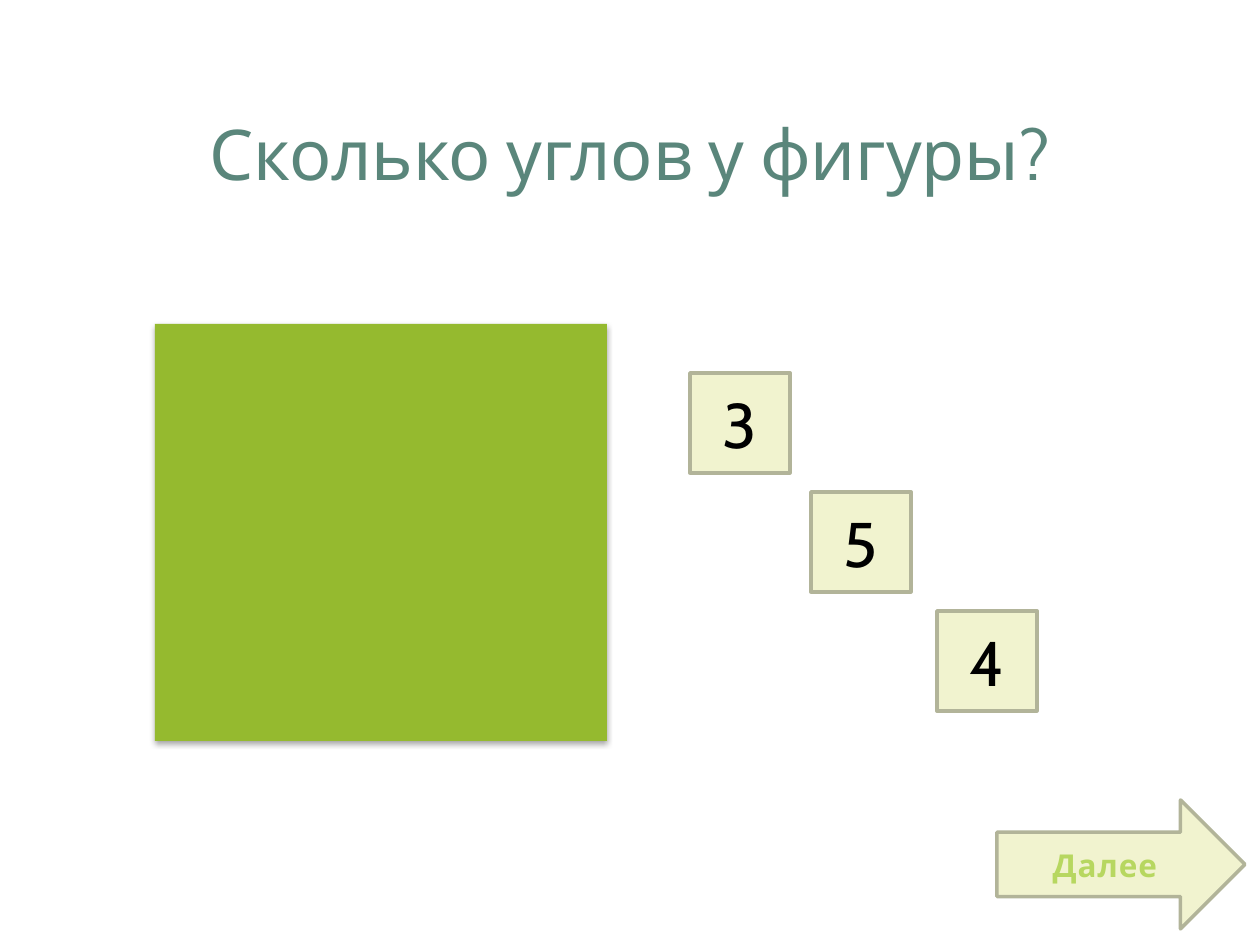
"""Build a quiz slide that asks how many corners a figure has."""
from lxml.etree import SubElement
from pptx import Presentation
from pptx.dml.color import RGBColor
from pptx.enum.shapes import MSO_SHAPE
from pptx.enum.text import MSO_ANCHOR, PP_ALIGN
from pptx.oxml.ns import qn
from pptx.util import Emu, Pt

EMU_PER_PX = 914400 / 126
FONT = "Cabin"
COLORS = {
    "title": "5A867B",
    "figure": "95BA2F",
    "button": "F1F3CF",
    "border": "B2B499",
    "answer": "000000",
    "next": "B7D760",
    "shadow": "000000",
}
ANSWER_SIZE = 100
ANSWERS = [("3", 690, 373), ("5", 811, 492), ("4", 937, 611)]


def px(*lengths):
    return [Emu(round(length * EMU_PER_PX)) for length in lengths]


def color(name):
    return RGBColor.from_string(COLORS[name])


def write_text(shape, text, size, color_name, bold=False):
    frame = shape.text_frame
    frame.word_wrap = True
    frame.vertical_anchor = MSO_ANCHOR.MIDDLE
    paragraph = frame.paragraphs[0]
    paragraph.text = text
    paragraph.alignment = PP_ALIGN.CENTER
    font = paragraph.font
    font.name = FONT
    font.size = Pt(size)
    font.bold = bold
    font.color.rgb = color(color_name)
    return paragraph


def add_title(slide, text, box):
    write_text(slide.shapes.add_textbox(*px(*box)), text, 40, "title")


def add_filled_shape(slide, kind, box, fill):
    shape = slide.shapes.add_shape(kind, *px(*box))
    shape.shadow.inherit = False
    shape.fill.solid()
    shape.fill.fore_color.rgb = color(fill)
    return shape


def add_figure(slide, box):
    shape = add_filled_shape(slide, MSO_SHAPE.RECTANGLE, box, "figure")
    shape.line.fill.background()
    effects = shape._element.spPr.find(qn("a:effectLst"))
    shadow = SubElement(effects, qn("a:outerShdw"), blurRad=str(Pt(3.1)),
                        dist=str(Pt(1.8)), dir="5400000", rotWithShape="0")
    shade = SubElement(shadow, qn("a:srgbClr"), val=COLORS["shadow"])
    SubElement(shade, qn("a:alpha"), val="35000")


def add_button(slide, kind, box, text, size, color_name, bold=False):
    shape = add_filled_shape(slide, kind, box, "button")
    shape.line.color.rgb = color("border")
    shape.line.width = Pt(2)
    return write_text(shape, text, size, color_name, bold)


def main():
    presentation = Presentation()
    presentation.slide_width, presentation.slide_height = px(1260, 945)
    slide = presentation.slides.add_slide(presentation.slide_layouts[6])
    add_title(slide, "Сколько углов у фигуры?", (63, 73, 1134, 158))
    add_figure(slide, (155, 324, 452, 417))
    for text, left, top in ANSWERS:
        box = (left, top, ANSWER_SIZE, ANSWER_SIZE)
        add_button(slide, MSO_SHAPE.RECTANGLE, box, text, 36, "answer")
    paragraph = add_button(slide, MSO_SHAPE.RIGHT_ARROW, (997, 800, 248, 129),
                           "Далее", 18, "next", bold=True)
    paragraph.runs[0].font._element.set("spc", "50")
    presentation.save("out.pptx")


if __name__ == "__main__":
    main()
